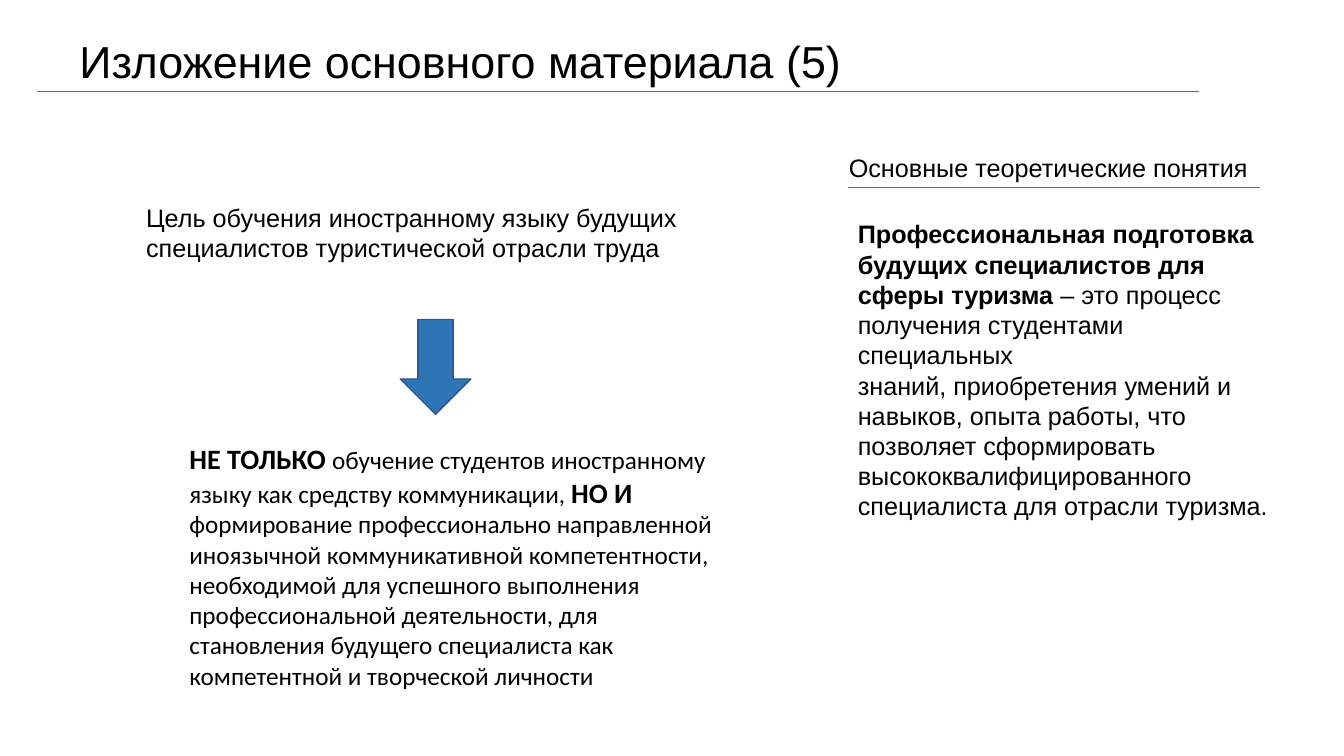
from dataclasses import dataclass

import pptx
import pptx.dml.color
import pptx.enum.shapes
import pptx.enum.text
import pptx.oxml
import pptx.oxml.ns
import pptx.slide
import pptx.util

Inches = pptx.util.Inches
COLORS = {"text": "000000", "accent": "2E75B6", "arrow_edge": "325491"}


@dataclass(frozen=True)
class Span:
    text: str
    size: int = 18
    bold: bool = False


@dataclass(frozen=True)
class TextBlock:
    left: float
    top: float
    width: float
    height: float
    paragraphs: list[list[Span]]
    font: str = "Arial"


@dataclass(frozen=True)
class Rule:
    left: float
    right: float
    y: float


def rgb(key: str) -> pptx.dml.color.RGBColor:
    return pptx.dml.color.RGBColor.from_string(COLORS[key])


def draw_text(slide: pptx.slide.Slide, block: TextBlock) -> None:
    box = slide.shapes.add_textbox(
        Inches(block.left), Inches(block.top), Inches(block.width), Inches(block.height)
    )
    frame = box.text_frame
    frame.word_wrap = True
    frame.auto_size = pptx.enum.text.MSO_AUTO_SIZE.SHAPE_TO_FIT_TEXT
    frame.text = "\n".join(spans[0].text for spans in block.paragraphs)
    for paragraph, spans in zip(frame.paragraphs, block.paragraphs):
        for span in spans[1:]:
            paragraph.add_run().text = span.text
        for run, span in zip(paragraph.runs, spans):
            run.font.name = block.font
            run.font.size = pptx.util.Pt(span.size)
            run.font.bold = span.bold
            run.font.color.rgb = rgb("text")


def draw_rule(slide: pptx.slide.Slide, rule: Rule) -> None:
    line = slide.shapes.add_connector(
        pptx.enum.shapes.MSO_CONNECTOR.STRAIGHT,
        Inches(rule.left), Inches(rule.y), Inches(rule.right), Inches(rule.y),
    )
    line.line.color.rgb = rgb("accent")
    line.line.width = pptx.util.Pt(0.5)
    properties = line._element.spPr
    properties.append(pptx.oxml.parse_xml(f"<a:effectLst {pptx.oxml.ns.nsdecls('a')}/>"))


def draw_down_arrow(
    slide: pptx.slide.Slide, left: float, top: float, width: float, height: float
) -> None:
    arrow = slide.shapes.add_shape(
        pptx.enum.shapes.MSO_SHAPE.DOWN_ARROW,
        Inches(left), Inches(top), Inches(width), Inches(height),
    )
    arrow.shadow.inherit = False
    arrow.fill.solid()
    arrow.fill.fore_color.rgb = rgb("accent")
    arrow.line.color.rgb = rgb("arrow_edge")
    arrow.line.width = pptx.util.Pt(1)


# Heading and section titles
TITLE = TextBlock(0.69, 0.29, 9.24, 0.64, [[Span("Изложение основного материала (5)", 32)]])
CONCEPTS_TITLE = TextBlock(8.32, 1.46, 4.65, 0.4, [[Span("Основные теоретические понятия")]])
GOAL = TextBlock(1.35, 1.96, 6.39, 0.71, [[Span(
    "Цель обучения иностранному языку будущих специалистов туристической отрасли труда"
)]])

# Definition: one paragraph per line
DEFINITION = TextBlock(8.41, 2.12, 4.32, 3.13, [
    [Span("Профессиональная подготовка", bold=True)],
    [Span("будущих специалистов для", bold=True)],
    [Span("сферы туризма ", bold=True), Span("– это процесс")],
    [Span("получения студентами специальных")],
    [Span("знаний, приобретения умений и")],
    [Span("навыков, опыта работы, что")],
    [Span("позволяет сформировать")],
    [Span("высококвалифицированного")],
    [Span("специалиста для отрасли туризма.")],
])

# What the goal includes
GOAL_CONTENT = TextBlock(1.78, 4.33, 5.51, 2.59, [[
    Span("НЕ ТОЛЬКО ", 20, True),
    Span("обучение студентов иностранному языку как средству коммуникации, "),
    Span("НО И ", 20, True),
    Span(
        "формирование профессионально направленной иноязычной коммуникативной "
        "компетентности, необходимой для успешного выполнения профессиональной "
        "деятельности, для становления будущего специалиста как компетентной "
        "и творческой личности"
    ),
]], font="Calibri")

TITLE_RULE = Rule(0.37, 11.89, 0.91)
CONCEPTS_RULE = Rule(8.41, 12.5, 1.86)


def main() -> None:
    presentation = pptx.Presentation()
    presentation.slide_width = Inches(13.33)
    presentation.slide_height = Inches(7.5)
    slide = presentation.slides.add_slide(presentation.slide_layouts[6])

    # Heading
    draw_text(slide, TITLE)
    draw_rule(slide, TITLE_RULE)

    # Theoretical concepts on the right
    draw_text(slide, CONCEPTS_TITLE)
    draw_rule(slide, CONCEPTS_RULE)
    draw_text(slide, DEFINITION)

    # Teaching goal on the left
    draw_text(slide, GOAL)
    draw_down_arrow(slide, 3.97, 3.17, 0.7, 0.94)
    draw_text(slide, GOAL_CONTENT)

    presentation.save("out.pptx")


if __name__ == "__main__":
    main()
